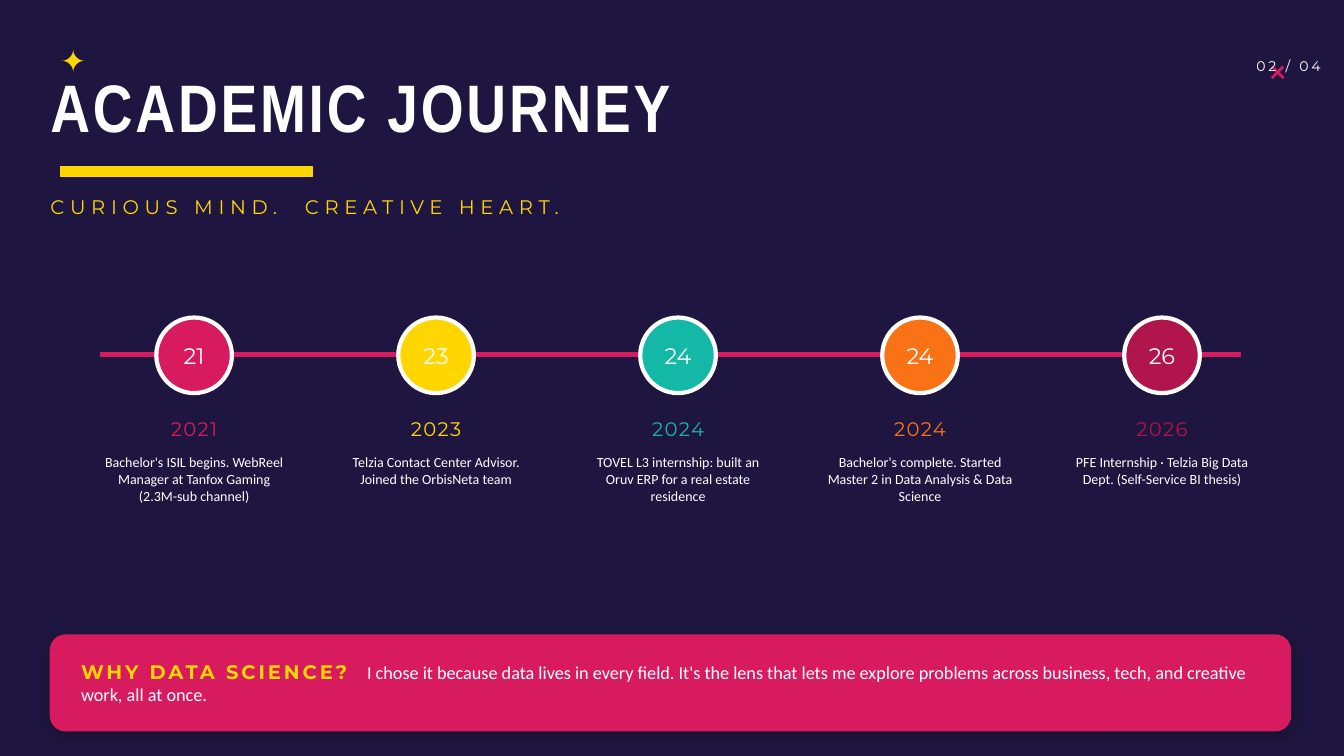
from lxml import etree
from pptx import Presentation
from pptx.dml.color import RGBColor
from pptx.enum.shapes import MSO_SHAPE
from pptx.enum.text import MSO_ANCHOR, MSO_AUTO_SIZE, PP_ALIGN
from pptx.oxml.ns import qn
from pptx.util import Inches, Pt

NIGHT = RGBColor(0x1E, 0x16, 0x40)
WHITE = RGBColor(0xFF, 0xFF, 0xFF)
YELLOW = RGBColor(0xFF, 0xD6, 0x00)
PINK = RGBColor(0xD8, 0x1B, 0x5F)
TEAL = RGBColor(0x14, 0xB8, 0xA6)
ORANGE = RGBColor(0xF9, 0x73, 0x16)
CRIMSON = RGBColor(0xB0, 0x15, 0x4C)

TITLE = "ACADEMIC JOURNEY"
TAGLINE = ("CURIOUS MIND.", "CREATIVE HEART.")
PAGE_NUMBER = "02 / 04"
MILESTONES = [
    ("2021", PINK, "Bachelor's ISIL begins. WebReel Manager at Tanfox Gaming (2.3M-sub channel)"),
    ("2023", YELLOW, "Telzia Contact Center Advisor. Joined the OrbisNeta team"),
    ("2024", TEAL, "TOVEL L3 internship: built an Oruv ERP for a real estate residence"),
    ("2024", ORANGE, "Bachelor's complete. Started Master 2 in Data Analysis & Data Science"),
    ("2026", CRIMSON, "PFE Internship · Telzia Big Data Dept. (Self-Service BI thesis)"),
]
QUESTION = "WHY DATA SCIENCE?"
ANSWER = ("I chose it because data lives in every field. It's the lens that lets me explore "
          "problems across business, tech, and creative work, all at once.")

FIRST_LEFT, STEP, COLUMN_WIDTH = 1, 2.4, 1.85
CIRCLE_TOP, CIRCLE_SIZE = 3.15, 0.75


def add_span(para, text, size, color, font="Montserrat", bold=False, spacing=0):
    span = para.add_run()
    span.text = text
    span.font.size = Pt(size)
    span.font.name = font
    span.font.bold = bold
    span.font.color.rgb = color
    if spacing:
        span.font._element.set("spc", str(spacing * 100))


def prepare_text(box, align=PP_ALIGN.LEFT, anchor=MSO_ANCHOR.MIDDLE, side=0, edge=0):
    """Set up the box's text frame and return its first paragraph."""
    frame = box.text_frame
    frame.word_wrap = True
    frame.auto_size = MSO_AUTO_SIZE.NONE
    frame.vertical_anchor = anchor
    frame.margin_left = frame.margin_right = Inches(side)
    frame.margin_top = frame.margin_bottom = Inches(edge)
    para = frame.paragraphs[0]
    para.alignment = align
    return para


def add_box(page, place, **layout):
    box = page.shapes.add_textbox(*map(Inches, place))
    return prepare_text(box, **layout)


def add_filled(page, kind, place, fill, line=None, line_width=1):
    shape = page.shapes.add_shape(kind, *map(Inches, place))
    shape.shadow.inherit = False
    shape.fill.solid()
    shape.fill.fore_color.rgb = fill
    shape.line.color.rgb = line or fill
    shape.line.width = Pt(line_width)
    return shape


def add_soft_shadow(shape):
    effects = shape._element.spPr.find(qn("a:effectLst"))
    shadow = etree.SubElement(effects, qn("a:outerShdw"), blurRad=str(Pt(12)), dist=str(Pt(4)),
                              dir="5400000", algn="bl", rotWithShape="0")
    color = etree.SubElement(shadow, qn("a:srgbClr"), val="000000")
    etree.SubElement(color, qn("a:alpha"), val="18000")


def add_header(page):
    for text, left, top, color in [("✦", 0.5, 0.4, YELLOW), ("×", 12.5, 0.5, PINK)]:
        para = add_box(page, (left, top, 0.4, 0.4), side=0.1, edge=0.05)
        add_span(para, text, 22, color, font="Calibri", bold=True)

    title = page.shapes.title
    title.left, title.top, title.width, title.height = map(Inches, (0.5, 0.5, 9, 1.1))
    add_span(prepare_text(title), TITLE, 48, WHITE, font="Arial Narrow", bold=True, spacing=2)

    add_filled(page, MSO_SHAPE.RECTANGLE, (0.6, 1.65, 2.5, 0.1), YELLOW)
    tagline = add_box(page, (0.5, 1.85, 9, 0.4))
    for text, spacing in [(TAGLINE[0], 4), (" ", 12), (TAGLINE[1], 4)]:
        add_span(tagline, text, 14, YELLOW, spacing=spacing)
    number = add_box(page, (12.2, 0.5, 0.9, 0.3), align=PP_ALIGN.RIGHT)
    add_span(number, PAGE_NUMBER, 10, WHITE, spacing=2)


def add_timeline(page):
    add_filled(page, MSO_SHAPE.RECTANGLE, (1, 3.5, 11.3, 0.04), PINK)
    for index, (year, color, story) in enumerate(MILESTONES):
        left = FIRST_LEFT + index * STEP
        circle_left = left + (COLUMN_WIDTH - CIRCLE_SIZE) / 2
        circle = add_filled(page, MSO_SHAPE.OVAL,
                            (circle_left, CIRCLE_TOP, CIRCLE_SIZE, CIRCLE_SIZE),
                            color, line=WHITE, line_width=3)
        add_span(prepare_text(circle, align=PP_ALIGN.CENTER), year[-2:], 16, WHITE)
        para = add_box(page, (left, 4.05, COLUMN_WIDTH, 0.4), align=PP_ALIGN.CENTER)
        add_span(para, year, 14, color, spacing=1)
        para = add_box(page, (left, 4.5, COLUMN_WIDTH, 1.6), align=PP_ALIGN.CENTER,
                       anchor=MSO_ANCHOR.TOP)
        add_span(para, story, 10, WHITE, font="Calibri")


def add_banner(page):
    banner = add_filled(page, MSO_SHAPE.ROUNDED_RECTANGLE, (0.5, 6.3, 12.3, 0.95), PINK)
    banner.adjustments[0] = 0.16
    add_soft_shadow(banner)
    para = prepare_text(banner, side=0.26)
    add_span(para, QUESTION, 14, YELLOW, bold=True, spacing=2)
    add_span(para, " ", 14, YELLOW, bold=True, spacing=8)
    add_span(para, ANSWER, 13, WHITE, font="Calibri")


def main():
    deck = Presentation()
    deck.slide_width, deck.slide_height = Inches(13.33), Inches(7.5)
    page = deck.slides.add_slide(deck.slide_layouts[5])
    page.background.fill.solid()
    page.background.fill.fore_color.rgb = NIGHT
    add_header(page)
    add_timeline(page)
    add_banner(page)
    deck.save("out.pptx")


if __name__ == "__main__":
    main()
